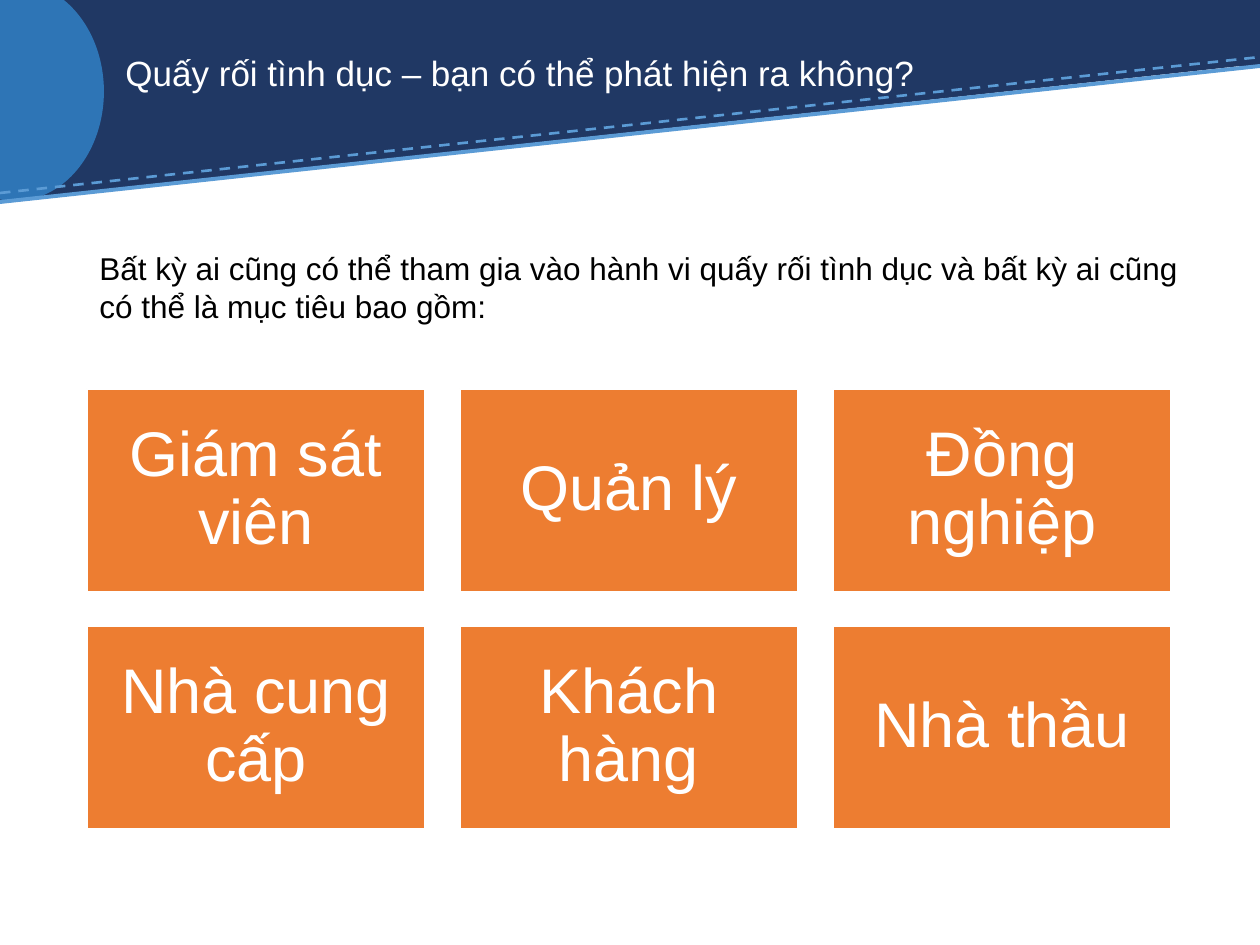
from lxml import etree
from pptx import Presentation
from pptx.dml.color import RGBColor
from pptx.enum import dml, shapes, text
from pptx.oxml import ns
from pptx.util import Emu, Pt

TITLE = "Quấy rối tình dục – bạn có thể phát hiện ra không?"
INTRO = ("Bất kỳ ai cũng có thể tham gia vào hành vi quấy rối tình dục "
         "và bất kỳ ai cũng có thể là mục tiêu bao gồm:")
ROLES = ["Giám sát viên", "Quản lý", "Đồng nghiệp",
         "Nhà cung cấp", "Khách hàng", "Nhà thầu"]

NAVY = RGBColor(0x20, 0x38, 0x64)
BLUE = RGBColor(0x2E, 0x75, 0xB6)
SKY = RGBColor(0x5B, 0x9B, 0xD5)
ORANGE = RGBColor(0xED, 0x7D, 0x31)
WHITE = RGBColor(0xFF, 0xFF, 0xFF)
BLACK = RGBColor(0x00, 0x00, 0x00)

WIDTH, HEIGHT = 1260, 945
COLUMNS = 3
CARD_LEFT, CARD_TOP = 87, 389
CARD_WIDTH, CARD_HEIGHT = 338, 203
COLUMN_STEP, ROW_STEP = 373, 237
CARD_INSET = 19

BANNER = [
    (shapes.MSO_SHAPE.RECTANGLE, (0, 0, WIDTH, 66), NAVY),
    (shapes.MSO_SHAPE.RIGHT_TRIANGLE, (0, 64, WIDTH, 137), NAVY),
    (shapes.MSO_SHAPE.OVAL, (-74, -18, 178, 219), BLUE),
]
EDGES = [
    ((0, 193, WIDTH, 57), 1.5, dml.MSO_LINE.DASH),
    ((0, 202, WIDTH, 66), 2.25, None),
]


def px(*lengths):
    return [Emu(round(length * 914400 / 126)) for length in lengths]


def add_block(page, kind, frame, color):
    block = page.shapes.add_shape(kind, *px(*frame))
    block.shadow.inherit = False
    block.fill.solid()
    block.fill.fore_color.rgb = color
    block.line.fill.background()
    return block


def add_edge(page, ends, weight, dash):
    edge = page.shapes.add_connector(shapes.MSO_CONNECTOR.STRAIGHT, *px(*ends))
    edge.line.color.rgb = SKY
    edge.line.width = Pt(weight)
    if dash:
        edge.line.dash_style = dash
    etree.SubElement(edge._element.spPr, ns.qn("a:effectLst"))


def write(box, words, size, color, align=text.PP_ALIGN.LEFT,
          anchor=text.MSO_ANCHOR.MIDDLE, spacing=0.9):
    frame = box.text_frame
    frame.word_wrap = True
    frame.vertical_anchor = anchor
    para = frame.paragraphs[0]
    para.text = words
    para.alignment = align
    para.line_spacing = spacing
    para.font.name = "Arial"
    para.font.size = Pt(size)
    para.font.color.rgb = color


def add_card(page, index, role):
    row, column = divmod(index, COLUMNS)
    frame = (CARD_LEFT + column * COLUMN_STEP, CARD_TOP + row * ROW_STEP,
             CARD_WIDTH, CARD_HEIGHT)
    card = add_block(page, shapes.MSO_SHAPE.RECTANGLE, frame, ORANGE)
    card.line.color.rgb = WHITE
    card.line.width = Pt(1)
    for side in ("left", "top", "right", "bottom"):
        setattr(card.text_frame, f"margin_{side}", px(CARD_INSET)[0])
    write(card, role, 36, WHITE, text.PP_ALIGN.CENTER)


def main():
    deck = Presentation()
    deck.slide_width, deck.slide_height = px(WIDTH, HEIGHT)
    page = deck.slides.add_slide(deck.slide_layouts[6])

    for kind, frame, color in BANNER:
        block = add_block(page, kind, frame, color)
        if kind == shapes.MSO_SHAPE.RIGHT_TRIANGLE:
            block._element.spPr.xfrm.set("flipV", "1")
    for ends, weight, dash in EDGES:
        add_edge(page, ends, weight, dash)

    title = page.shapes.add_textbox(*px(113, 25, 1017, 101))
    write(title, TITLE, 20, WHITE)
    for index, role in enumerate(ROLES):
        add_card(page, index, role)
    intro = page.shapes.add_textbox(*px(87, 243, 1142, 88))
    write(intro, INTRO, 18, BLACK, anchor=text.MSO_ANCHOR.TOP, spacing=1.0)

    deck.save("out.pptx")


if __name__ == "__main__":
    main()
